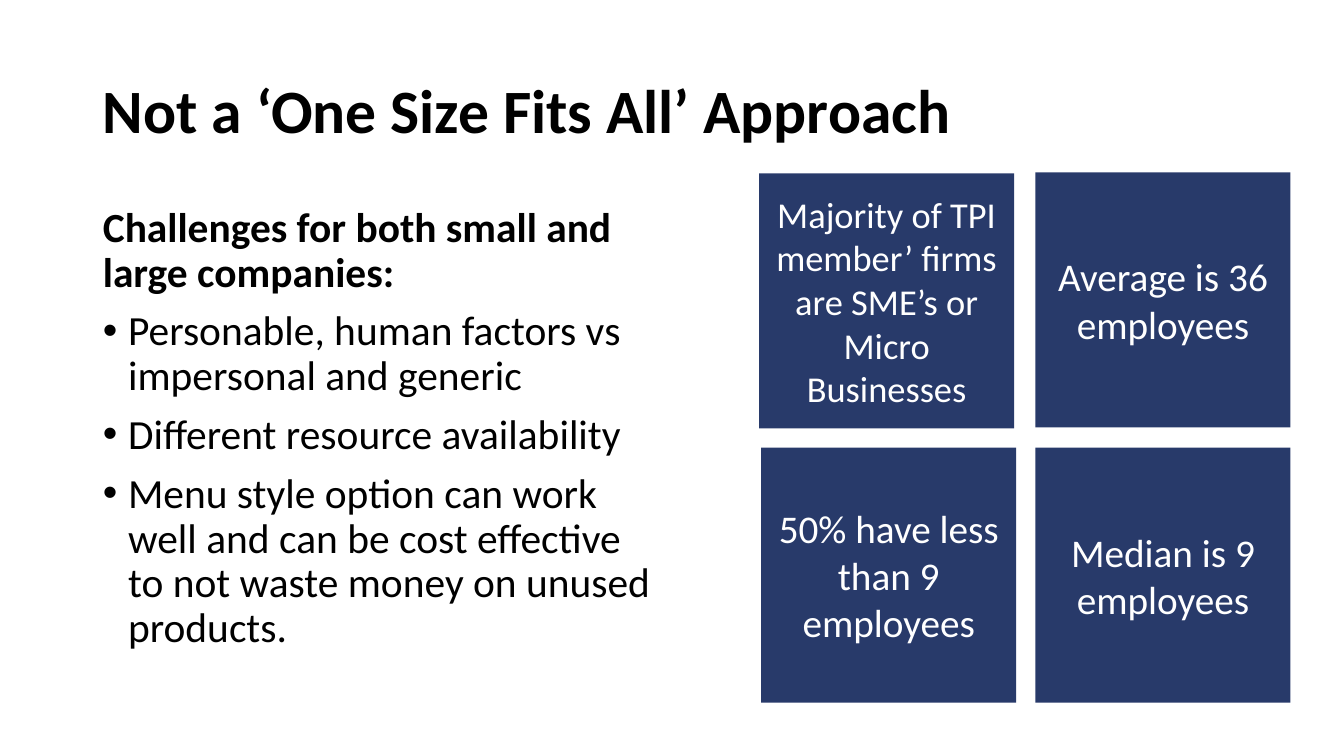
from typing import NamedTuple

from lxml import etree
from pptx import Presentation
from pptx import util as u
from pptx.dml.color import RGBColor
from pptx.enum import shapes, text
from pptx.oxml.ns import qn

PX = 9144  # EMU per px, 100 px to the inch
FONT = "Calibri"
COLORS = {"ink": "000000", "navy": "283A6A", "white": "FFFFFF"}
SIDE = 253
HANG = 25


class Tile(NamedTuple):
    left: int
    top: int
    label: str
    size: int = 28


class Item(NamedTuple):
    words: str
    head: bool = False


TITLE = "Not a ‘One Size Fits All’ Approach"
ITEMS = [
    Item("Challenges for both small and large companies:", True),
    Item("Personable, human factors vs impersonal and generic"),
    Item("Different resource availability"),
    Item("Menu style option can work well and can be cost effective "
         "to not waste money on unused products."),
]
TILES = [
    Tile(753, 172, "Majority of TPI member’ firms are SME’s or Micro Businesses", 26),
    Tile(1027, 171, "Average is 36 employees"),
    Tile(755, 444, "50% have less than 9 employees"),
    Tile(1027, 444, "Median is 9 employees"),
]


def px(count: int) -> u.Emu:
    return u.Emu(count * PX)


def color(name: str) -> RGBColor:
    return RGBColor.from_string(COLORS[name])


def place(shape, left: int, top: int, width: int, height: int) -> None:
    shape.left, shape.top = px(left), px(top)
    shape.width, shape.height = px(width), px(height)


def frame(shape, anchor):
    """Return the shape's text frame, wrapped, unscaled and anchored."""
    body = shape.text_frame
    body.word_wrap = True
    body.auto_size = text.MSO_AUTO_SIZE.NONE
    body.vertical_anchor = anchor
    return body


def write(para, words: str, size: float, ink: str, bold: bool = False) -> None:
    run = para.add_run()
    run.text = words
    font = run.font
    font.name, font.size, font.bold = FONT, u.Pt(size), bold
    font.color.rgb = color(ink)


def bullet(para, shown: bool) -> None:
    props = para._p.get_or_add_pPr()
    hang = px(HANG) if shown else 0
    props.set("marL", str(hang))
    props.set("indent", str(-hang))
    if shown:
        etree.SubElement(props, qn("a:buFont")).set("typeface", "Arial")
        etree.SubElement(props, qn("a:buChar")).set("char", "•")
    else:
        etree.SubElement(props, qn("a:buNone"))


def add_title(shape) -> None:
    place(shape, 92, 40, 1150, 145)
    para = frame(shape, text.MSO_ANCHOR.MIDDLE).paragraphs[0]
    para.alignment = text.PP_ALIGN.LEFT
    para.line_spacing = 0.9
    write(para, TITLE, 44, "ink", True)


def add_list(shape) -> None:
    place(shape, 92, 200, 567, 476)
    body = frame(shape, text.MSO_ANCHOR.TOP)
    for rank, item in enumerate(ITEMS):
        para = body.add_paragraph() if rank else body.paragraphs[0]
        bullet(para, not item.head)
        para.line_spacing = 0.9
        para.space_before = u.Pt(10 if rank else 0)
        write(para, item.words, 29.6, "ink", item.head)


def add_tile(slide, tile: Tile) -> None:
    box = slide.shapes.add_shape(
        shapes.MSO_SHAPE.RECTANGLE,
        px(tile.left), px(tile.top), px(SIDE), px(SIDE))
    box.shadow.inherit = False
    box.fill.solid()
    box.fill.fore_color.rgb = color("navy")
    box.line.fill.background()
    para = frame(box, text.MSO_ANCHOR.MIDDLE).paragraphs[0]
    para.alignment = text.PP_ALIGN.CENTER
    write(para, tile.label, tile.size, "white")


def main() -> None:
    deck = Presentation()
    deck.slide_width, deck.slide_height = px(1333), px(750)
    slide = deck.slides.add_slide(deck.slide_layouts[1])
    add_title(slide.shapes.title)
    add_list(slide.placeholders[1])
    for tile in TILES:
        add_tile(slide, tile)
    deck.save("out.pptx")


if __name__ == "__main__":
    main()
